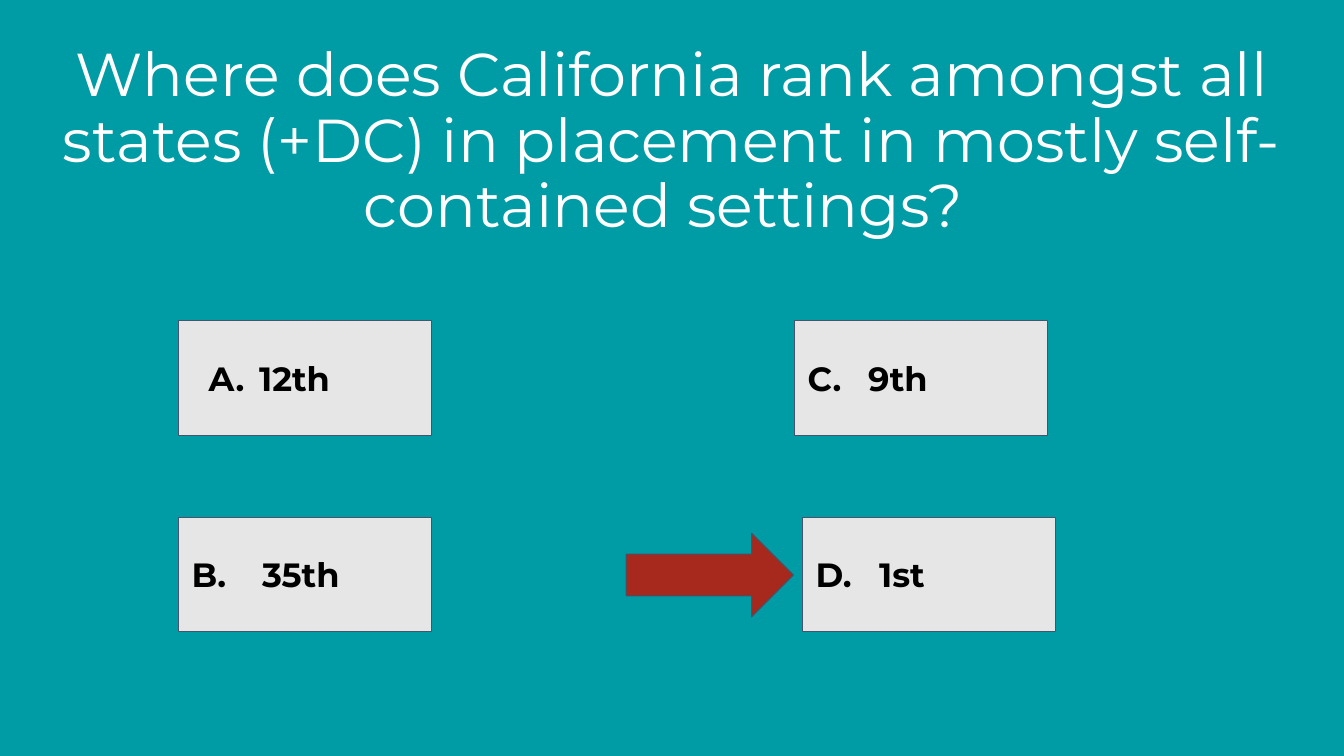
"""Build a quiz slide with four answer boxes and an arrow at the right answer."""
from lxml.etree import SubElement
from pptx import Presentation
from pptx.dml.color import RGBColor
from pptx.enum.shapes import MSO_SHAPE
from pptx.enum.text import MSO_ANCHOR, PP_ALIGN
from pptx.oxml.ns import qn
from pptx.util import Inches, Pt


def color(hex_string):
    return RGBColor.from_string(hex_string)


def add_shape(kind, left, top, width, height, fill):
    shape = slide.shapes.add_shape(kind, Inches(left), Inches(top), Inches(width), Inches(height))
    shape.shadow.inherit = False
    shape.fill.solid()
    shape.fill.fore_color.rgb = color(fill)
    shape.line.color.rgb = color("44546A")
    shape.line.width = Pt(0.75)
    return shape


presentation = Presentation()
presentation.slide_width = Inches(13.33)
presentation.slide_height = Inches(7.5)
slide = presentation.slides.add_slide(presentation.slide_layouts[6])
slide.background.fill.solid()
slide.background.fill.fore_color.rgb = color("009CA6")

title = slide.shapes.add_textbox(Inches(0.45), Inches(0.8), Inches(12.42), Inches(1.23))
title.text_frame.word_wrap = True
title.text_frame.vertical_anchor = MSO_ANCHOR.MIDDLE
paragraph = title.text_frame.paragraphs[0]
paragraph.alignment = PP_ALIGN.CENTER
paragraph.line_spacing = 0.9
run = paragraph.add_run()
run.text = "Where does California rank amongst all states (+DC) in placement in mostly self-contained settings? "
run.font.name = "Montserrat"
run.font.size = Pt(43.2)
run.font.color.rgb = color("FFFFFF")

answers = [
    ("12th", 1.77, 3.18, 0.67, -0.5),
    ("B.\t35th", 1.77, 5.13, 0.7, -0.7),
    ("C.\t9th", 7.88, 3.18, 0.6, -0.6),
    ("D.\t1st", 7.96, 5.13, 0.63, -0.63),
]
for text, left, top, margin, indent in answers:
    box = add_shape(MSO_SHAPE.RECTANGLE, left, top, 2.51, 1.14, "E7E6E6")
    frame = box.text_frame
    frame.word_wrap = True
    frame.vertical_anchor = MSO_ANCHOR.MIDDLE
    frame.margin_left = frame.margin_right = Inches(0.13)
    frame.margin_top = frame.margin_bottom = Inches(0.13)
    paragraph = frame.paragraphs[0]
    paragraph.alignment = PP_ALIGN.LEFT
    properties = paragraph._p.get_or_add_pPr()
    properties.set("marL", str(Inches(margin)))
    properties.set("indent", str(Inches(indent)))
    if "\t" not in text:
        bullet_color = SubElement(properties, qn("a:buClr"))
        SubElement(bullet_color, qn("a:srgbClr"), val="000000")
        SubElement(properties, qn("a:buFont"), typeface="Montserrat")
        SubElement(properties, qn("a:buAutoNum"), type="alphaUcPeriod")
    run = paragraph.add_run()
    run.text = text
    run.font.name = "Montserrat"
    run.font.size = Pt(24)
    run.font.bold = True
    run.font.color.rgb = color("000000")

add_shape(MSO_SHAPE.RIGHT_ARROW, 6.21, 5.29, 1.66, 0.83, "A7291E")

presentation.save("out.pptx")
